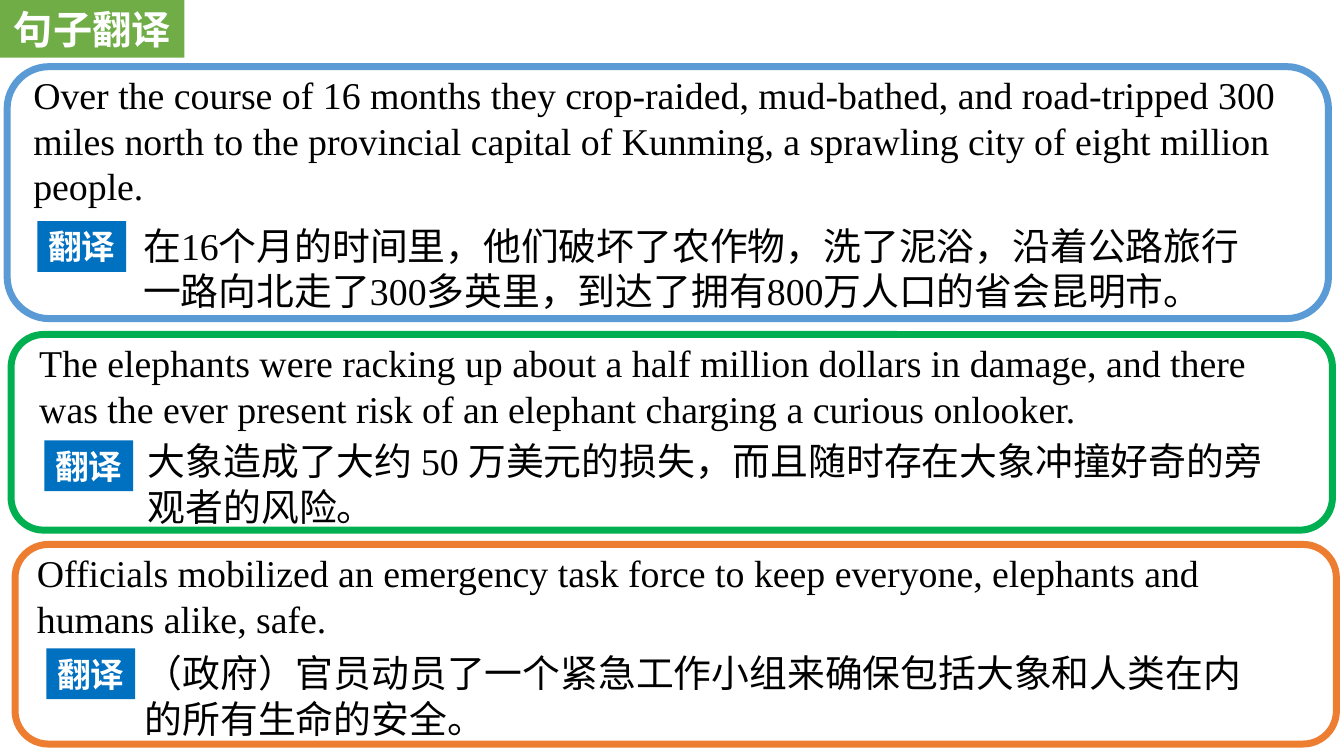
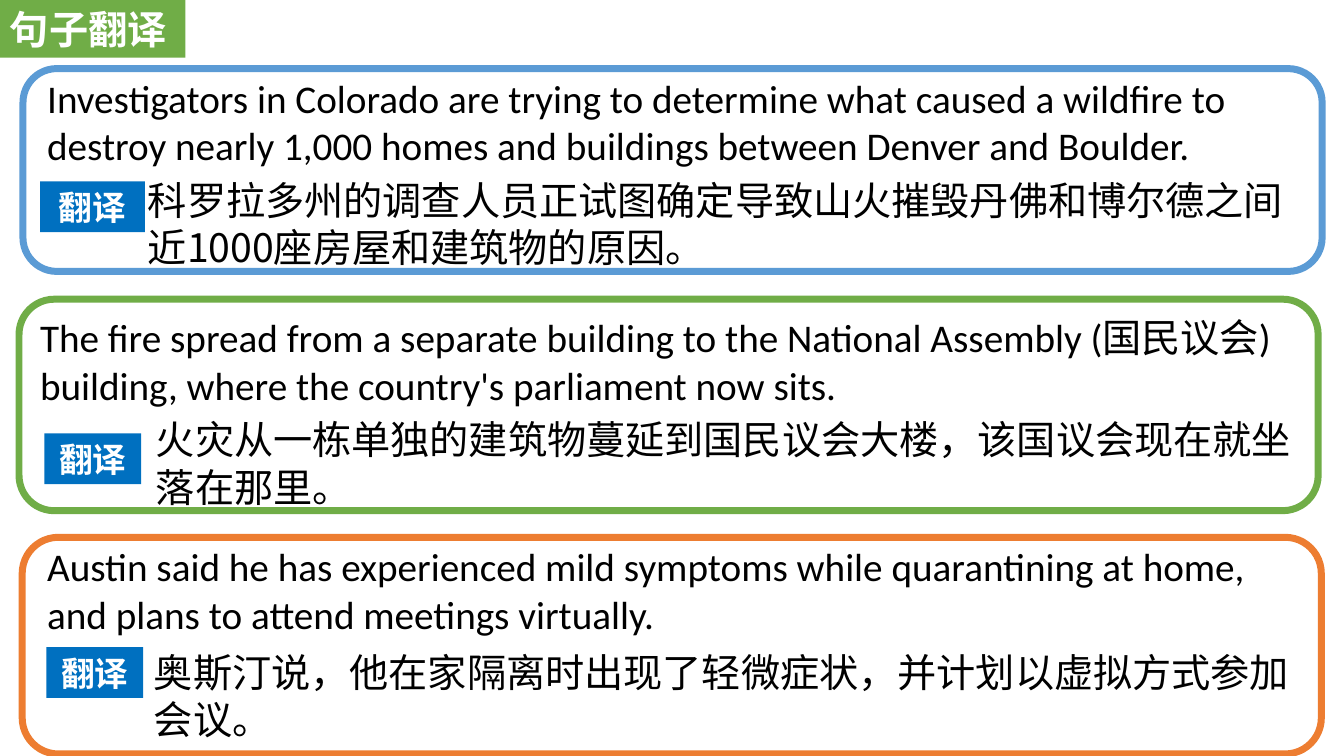
from dataclasses import dataclass

from lxml.etree import SubElement
from pptx import Presentation
from pptx.dml.color import RGBColor
from pptx.enum.shapes import MSO_SHAPE
from pptx.enum.text import MSO_ANCHOR, MSO_AUTO_SIZE, PP_ALIGN
from pptx.oxml.ns import qn
from pptx.util import Cm, Pt

COLOURS = {
    "blue": "5B9BD5",
    "green": "00B050",
    "leaf": "70AD47",
    "orange": "ED7D31",
    "tag": "0070C0",
    "black": "000000",
    "white": "FFFFFF",
}
CHINESE_FONT = "Noto Sans CJK SC"
HEADING = {"name": "Calibri", "size": Pt(28), "bold": True}
TAG = {"name": "Calibri", "size": Pt(24), "bold": True}
TEXT_HEIGHT = 2.6
# Room above Chinese lines, whose fixed spacing is tighter than the font's own
CHINESE_INSET = 0.24
LATIN_INSET = 0.13


@dataclass
class Style:
    """Type and sizes used on all cards of one slide; lengths in cm."""
    english: dict
    chinese: dict
    line_spacing: float
    heading_width: float
    heading_align: PP_ALIGN
    card_width: float
    english_width: float
    chinese_width: float


@dataclass
class Card:
    """A framed sentence; the three offsets are cm from the frame's corner."""
    colour: str
    left: float
    top: float
    height: float
    english: str
    chinese: str
    english_offset: tuple
    tag_offset: tuple
    chinese_offset: tuple
    tag_width: float = 2.44


def rgb(name):
    return RGBColor.from_string(COLOURS[name])


def write(paragraph, text, font, colour):
    run = paragraph.add_run()
    run.text = text
    for attribute, value in font.items():
        setattr(run.font, attribute, value)
    run.font.color.rgb = rgb(colour)
    SubElement(run._r.get_or_add_rPr(), qn("a:ea"), typeface=CHINESE_FONT)


def set_frame(frame, **values):
    for attribute, value in values.items():
        setattr(frame, attribute, value)


def add_label(shape, text, font, fill, align):
    """Fill the shape and write one line of white text in its middle."""
    shape.fill.solid()
    shape.fill.fore_color.rgb = rgb(fill)
    set_frame(shape.text_frame, vertical_anchor=MSO_ANCHOR.MIDDLE,
              auto_size=MSO_AUTO_SIZE.NONE, word_wrap=True,
              margin_left=Cm(0.25), margin_right=Cm(0.25),
              margin_top=0, margin_bottom=0)
    paragraph = shape.text_frame.paragraphs[0]
    paragraph.alignment = align
    write(paragraph, text, font, "white")


def add_heading(slide, style):
    title = slide.shapes.title
    title.left, title.top = Cm(0), Cm(0)
    title.width, title.height = Cm(style.heading_width), Cm(1.45)
    add_label(title, "句子翻译", HEADING, "leaf", style.heading_align)


def add_text(slide, left, top, width, parts, line_spacing, inset):
    """Add a paragraph made of (text, font) parts."""
    box = slide.shapes.add_textbox(Cm(left), Cm(top), Cm(width), Cm(TEXT_HEIGHT))
    set_frame(box.text_frame, word_wrap=True, margin_top=Cm(inset),
              auto_size=MSO_AUTO_SIZE.SHAPE_TO_FIT_TEXT)
    paragraph = box.text_frame.paragraphs[0]
    paragraph.line_spacing = Pt(line_spacing)
    for text, font in parts:
        write(paragraph, text, font, "black")


def add_card(slide, card, style):
    def place(offset):
        return card.left + offset[0], card.top + offset[1]

    frame = slide.shapes.add_shape(
        MSO_SHAPE.ROUNDED_RECTANGLE, Cm(card.left), Cm(card.top),
        Cm(style.card_width), Cm(card.height))
    frame.shadow.inherit = False
    frame.fill.background()
    frame.line.color.rgb = rgb(card.colour)
    frame.line.width = Pt(5)

    add_text(slide, *place(card.english_offset), style.english_width,
             [(card.english, style.english)], style.line_spacing, LATIN_INSET)

    tag_left, tag_top = place(card.tag_offset)
    tag = slide.shapes.add_shape(
        MSO_SHAPE.RECTANGLE, Cm(tag_left), Cm(tag_top),
        Cm(card.tag_width), Cm(1.28))
    tag.shadow.inherit = False
    tag.line.fill.background()
    add_label(tag, "翻译", TAG, "tag", PP_ALIGN.CENTER)

    add_text(slide, *place(card.chinese_offset), style.chinese_width,
             [(card.chinese, style.chinese)], style.line_spacing, CHINESE_INSET)


def add_translation_slide(presentation, style, cards):
    slide = presentation.slides.add_slide(presentation.slide_layouts[5])
    add_heading(slide, style)
    for card in cards:
        add_card(slide, card, style)


SERIF = {"name": "Times New Roman", "size": Pt(27)}
ELEPHANT_STYLE = Style(SERIF, SERIF, 32.5, 4.65, PP_ALIGN.CENTER,
                       33.3, 32.5, 28.93)
ELEPHANT_CARDS = [
    Card("blue", 0.18, 1.68, 6.35,
         "Over the course of 16 months they crop-raided, mud-bathed, and "
         "road-tripped 300 miles north to the provincial capital of Kunming, "
         "a sprawling city of eight million people.",
         "在16个月的时间里，他们破坏了农作物，洗了泥浴，沿着公路旅行"
         "一路向北走了300多英里，到达了拥有800万人口的省会昆明市。",
         (0.41, 0), (0.76, 3.89), (3.18, 3.68), 2.24),
    Card("green", 0.28, 8.43, 4.93,
         "The elephants were racking up about a half million dollars in damage, "
         "and there was the ever present risk of an elephant charging a curious "
         "onlooker.",
         "大象造成了大约 50 万美元的损失，而且随时存在大象冲撞好奇的旁观者的风险。",
         (0.46, 0), (0.84, 2.67), (3.2, 2.36), 2.24),
    Card("orange", 0.38, 13.72, 5.03,
         "Officials mobilized an emergency task force to keep everyone, "
         "elephants and humans alike, safe.",
         "（政府）官员动员了一个紧急工作小组来确保包括大象和人类在内的所有生命的安全。",
         (0.3, 0), (0.79, 2.62), (3.02, 2.41), 2.24),
]

FIRE_STYLE = Style({"name": "Calibri", "size": Pt(28)},
                   {"name": CHINESE_FONT, "size": Pt(28)},
                   33.8, 4.67, PP_ALIGN.LEFT, 32.74, 32.4, 29.82)
FIRE_CARDS = [
    Card("blue", 0.58, 1.73, 5.11,
         "Investigators in Colorado are trying to determine what caused a "
         "wildfire to destroy nearly 1,000 homes and buildings between Denver "
         "and Boulder.",
         "科罗拉多州的调查人员正试图确定导致山火摧毁丹佛和博尔德之间"
         "近1000座房屋和建筑物的原因。",
         (0.36, 0), (0.43, 2.84), (2.9, 2.46), 2.64),
    Card("leaf", 0.48, 7.54, 5.33,
         "The fire spread from a separate building to the National Assembly "
         "(国民议会) building, where the country's parliament now sits.",
         "火灾从一栋单独的建筑物蔓延到国民议会大楼，该国议会现在就坐落在那里。",
         (0.28, 0.23), (0.64, 3.38), (3.2, 2.69)),
    Card("orange", 0.56, 13.54, 5.46,
         "Austin said he has experienced mild symptoms while quarantining at "
         "home, and plans to attend meetings virtually.",
         "奥斯汀说，他在家隔离时出现了轻微症状，并计划以虚拟方式参加会议。",
         (0.38, 0), (0.61, 2.77), (3.07, 2.54)),
]


def main():
    presentation = Presentation()
    presentation.slide_width, presentation.slide_height = Cm(33.87), Cm(19.05)
    add_translation_slide(presentation, ELEPHANT_STYLE, ELEPHANT_CARDS)
    add_translation_slide(presentation, FIRE_STYLE, FIRE_CARDS)
    presentation.save("out.pptx")


if __name__ == "__main__":
    main()
